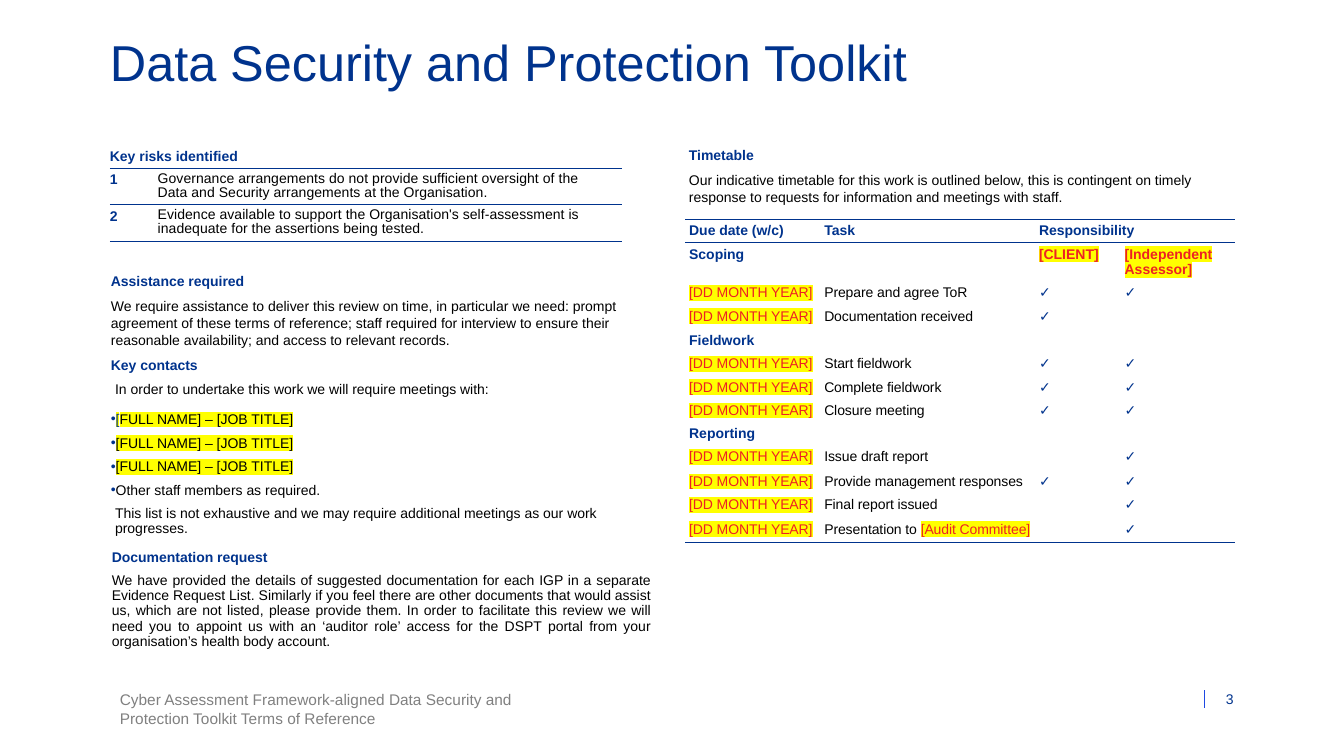
from lxml.etree import SubElement
from pptx import Presentation
from pptx.dml.color import RGBColor
from pptx.enum.shapes import MSO_CONNECTOR
from pptx.enum.text import MSO_ANCHOR, MSO_AUTO_SIZE, PP_ALIGN
from pptx.oxml.ns import qn
from pptx.util import Pt

NAVY, BLUE, RED, BLACK, GREY, YELLOW = (
    "00338D", "1E49E2", "ED2124", "000000", "808080", "FFFF00")
NO_STYLE = "{2D5ABB26-0587-4C30-8999-92F81FD0307C}"
INSET = 2.7

# style: size, colour, bold, highlight, letter spacing in hundredths of a point
STYLES = {
    "title": (36, NAVY, False, None, 0),
    "head": (10, NAVY, True, None, 0),
    "body": (10, BLACK, False, None, 0),
    "risk": (10, BLACK, False, None, 5),
    "bracket": (10, NAVY, False, YELLOW, 0),
    "contact": (10, BLACK, False, YELLOW, 0),
    "party": (10, RED, True, YELLOW, 0),
    "date": (10, RED, False, YELLOW, -5),
    "task": (10, BLACK, False, None, -5),
    "tick": (10, NAVY, False, None, -5),
    "footer": (11, GREY, False, None, 0),
    "page": (10, NAVY, False, None, 0),
}

TITLE = "Data Security and Protection Toolkit"
FOOTER = ("Cyber Assessment Framework-aligned Data Security and "
          "Protection Toolkit Terms of Reference")
PAGE = "3"

PLAIN = {"after": 6}
NOTE = {"left": 3, "lines": 0.9}
BULLET = {"left": 3, "lines": 0.9, "after": 6, "bullet": True}
JUSTIFIED = {"left": 3, "lines": 0.9, "after": 6, "align": PP_ALIGN.JUSTIFY}

# paragraph: runs as (text, style), then its format
ASSISTANCE = [
    ([("Assistance required", "head")], PLAIN),
    ([("We require assistance to deliver this review on time, in particular we need: "
       "prompt agreement of these terms of reference; staff required for interview to "
       "ensure their reasonable availability; and access to relevant records.", "body")], PLAIN),
    ([("Key contacts", "head")], PLAIN),
    ([("In order to undertake this work we will require meetings with:", "body")],
     {**NOTE, "after": 10.8}),
    ([("[", "bracket"), ("FULL NAME] – [JOB TITLE]", "contact")], BULLET),
    ([("[FULL NAME] – [JOB TITLE]", "contact")], BULLET),
    ([("[FULL NAME] – [JOB TITLE]", "contact")], BULLET),
    ([("Other staff members as required.", "body")], BULLET),
    ([("This list is not exhaustive and we may require additional meetings as our work "
       "progresses.", "body")], NOTE),
]
TIMETABLE_INTRO = [
    ([("Timetable", "head")], PLAIN),
    ([("Our indicative timetable for this work is outlined below, this is contingent on "
       "timely response to requests for information and meetings with staff.", "body")], PLAIN),
]
DOCUMENTATION = [
    ([("Documentation request", "head")], JUSTIFIED),
    ([("We have provided the details of suggested documentation for each IGP in a separate "
       "Evidence Request List. Similarly if you feel there are other documents that would "
       "assist us, which are not listed, please provide them. In order to facilitate this "
       "review we will need you to appoint us with an ‘auditor role’ access for the DSPT "
       "portal from your organisation’s health body account.", "body")], JUSTIFIED),
]

RISKS_HEAD = "Key risks identified"
RISKS = [
    "Governance arrangements do not provide sufficient oversight of the Data and Security "
    "arrangements at the Organisation.",
    "Evidence available to support the Organisation's self-assessment is inadequate for the "
    "assertions being tested.",
]

DATE = "[DD MONTH YEAR]"
COLUMNS = ["Due date (w/c)", "Task", "Responsibility"]
# phase: name, parties, tasks as (text, marked text, client tick, assessor tick)
PHASES = [
    ("Scoping", ["[CLIENT]", "[Independent Assessor]"],
     [("Prepare and agree ToR", "", "✓", "✓"),
      ("Documentation received", "", "✓", "")]),
    ("Fieldwork", [],
     [("Start fieldwork", "", "✓", "✓"),
      ("Complete fieldwork", "", "✓", "✓"),
      ("Closure meeting", "", "✓", "✓")]),
    ("Reporting", [],
     [("Issue draft report", "", "", "✓"),
      ("Provide management responses", "", "✓", "✓"),
      ("Final report issued", "", "", "✓"),
      ("Presentation to ", "[Audit Committee]", "", "✓")]),
]


def rgb(color):
    return RGBColor.from_string(color)


def write(p, runs, left=0, lines=1.0, before=0, after=0, bullet=False, align=PP_ALIGN.LEFT):
    """Fill a paragraph with styled runs and format it."""
    p.alignment, p.line_spacing = align, lines
    p.space_before, p.space_after = Pt(before), Pt(after)
    pPr = p._p.get_or_add_pPr()
    pPr.set("marL", str(Pt(left)))
    pPr.set("indent", str(Pt(-left if bullet else 0)))
    if bullet:
        SubElement(SubElement(pPr, qn("a:buClr")), qn("a:srgbClr")).set("val", NAVY)
        SubElement(pPr, qn("a:buChar")).set("char", "•")
    else:
        SubElement(pPr, qn("a:buNone"))
    for text, style in runs:
        size, color, bold, highlight, spacing = STYLES[style]
        r = p.add_run()
        r.text = text
        r.font.name, r.font.size, r.font.bold = "Arial", Pt(size), bold
        r.font.color.rgb = rgb(color)
        rPr = r._r.get_or_add_rPr()
        rPr.set("spc", str(spacing))
        if highlight:
            mark = SubElement(rPr, qn("a:highlight"))
            SubElement(mark, qn("a:srgbClr")).set("val", highlight)
            rPr.find(qn("a:solidFill")).addnext(mark)
    if not runs:
        p._p.get_or_add_endParaRPr().set("sz", "1000")


def fill_frame(sp, box, paragraphs, margins=(0, 0), anchor=MSO_ANCHOR.TOP):
    """Place a text shape and write its paragraphs; margins are (sides, top and bottom)."""
    sp.left, sp.top, sp.width, sp.height = map(Pt, box)
    tf = sp.text_frame
    tf.word_wrap, tf.auto_size, tf.vertical_anchor = True, MSO_AUTO_SIZE.NONE, anchor
    tf.margin_left = tf.margin_right = Pt(margins[0])
    tf.margin_top = tf.margin_bottom = Pt(margins[1])
    for i, (runs, fmt) in enumerate(paragraphs):
        write(tf.paragraphs[0] if i == 0 else tf.add_paragraph(), runs, **fmt)


def fill_cell(cell, runs, fmt, edges="", left=INSET, right=INSET, anchor=MSO_ANCHOR.TOP):
    """Write a cell; edges holds T and B for the ruled sides."""
    cell.margin_left, cell.margin_right = Pt(left), Pt(right)
    cell.margin_top = cell.margin_bottom = Pt(INSET)
    cell.vertical_anchor = anchor
    write(cell.text_frame.paragraphs[0], runs, **fmt)
    for edge in edges:
        ln = SubElement(cell._tc.get_or_add_tcPr(), qn("a:ln" + edge))
        ln.set("w", str(Pt(1)))
        SubElement(SubElement(ln, qn("a:solidFill")), qn("a:srgbClr")).set("val", NAVY)
    cell.fill.background()


def add_plain_table(s, x, y, widths, heights):
    box = map(Pt, (x, y, sum(widths), sum(heights)))
    table = s.shapes.add_table(len(heights), len(widths), *box).table
    table.first_row = table.horz_banding = False
    table._tbl.tblPr.find(qn("a:tableStyleId")).text = NO_STYLE
    for col, w in zip(table.columns, widths):
        col.width = Pt(w)
    for row, h in zip(table.rows, heights):
        row.height = Pt(h)
    return table


def add_timetable(s):
    rows = [[[(name, "head")] for name in COLUMNS] + [[]]]
    merges = [(0, 2)]
    for phase, parties, tasks in PHASES:
        if not parties:
            merges.append((len(rows), 0))
        party_cells = [[(name, "party")] for name in parties] or [[], []]
        rows.append([[(phase, "head")], [], *party_cells])
        for task, marked, *ticks in tasks:
            runs = [(task, "task")] + ([(marked, "date")] if marked else [])
            rows.append([[(DATE, "date")], runs, *([(t, "tick")] if t else [] for t in ticks)])
    table = add_plain_table(s, 489.6, 156.8, [96.5, 153.4, 61.2, 81.6], [15.8] * len(rows))
    for i, row in enumerate(rows):
        edges = "TB" if i == 0 else "B" if i == len(rows) - 1 else ""
        anchor = MSO_ANCHOR.BOTTOM if i == 0 else MSO_ANCHOR.TOP
        for j, runs in enumerate(row):
            fill_cell(table.cell(i, j), runs, {"before": 3, "after": 3}, edges, anchor=anchor)
    for i, j in merges:
        table.cell(i, j).merge(table.cell(i, 3))


def add_risks(s):
    table = add_plain_table(s, 78.5, 104.4, [31.2, 334.8], [15.8] + [26.1] * len(RISKS))
    for j, runs in enumerate([[(RISKS_HEAD, "head")], []]):
        fill_cell(table.cell(0, j), runs, {"lines": 0.9, "after": 6}, "B", 0,
                  anchor=MSO_ANCHOR.BOTTOM)
    table.cell(0, 0).merge(table.cell(0, 1))
    for i, risk in enumerate(RISKS, 1):
        number_edges = ("T" if i == 1 else "") + ("B" if i == len(RISKS) else "")
        fill_cell(table.cell(i, 0), [(str(i), "head")], {}, number_edges, 0)
        fill_cell(table.cell(i, 1), [(risk, "risk")], {**NOTE, "after": 6}, "TB", 0, 14)


prs = Presentation()
prs.slide_width, prs.slide_height = Pt(960), Pt(540)
s = prs.slides.add_slide(prs.slide_layouts[3])
title, left_body, right_body = s.placeholders

fill_frame(title, (78.5, 33.8, 698.4, 41.8), [([(TITLE, "title")], {"lines": 0.7})])
fill_frame(left_body, (79.2, 194.8, 390.6, 190), ASSISTANCE)
fill_frame(right_body, (492.1, 104.4, 390.6, 48), TIMETABLE_INTRO)
add_timetable(s)
add_risks(s)

for box, paragraphs, margins, anchor in [
    ((74.2, 390.2, 393.1, 67), DOCUMENTATION, (INSET, INSET), MSO_ANCHOR.TOP),
    ((78.5, 489.6, 327.6, 41.8), [([(FOOTER, "footer")], {})], (7.2, 3.6), MSO_ANCHOR.TOP),
    ((861.8, 493.4, 19.4, 11.5), [([(PAGE, "page")], {"align": PP_ALIGN.RIGHT})], (0, 0),
     MSO_ANCHOR.BOTTOM),
]:
    fill_frame(s.shapes.add_textbox(0, 0, 0, 0), box, paragraphs, margins, anchor)

divider = s.shapes.add_connector(MSO_CONNECTOR.STRAIGHT, *map(Pt, (860.4, 493.2, 860.4, 505.4)))
divider.line.color.rgb, divider.line.width = rgb(BLUE), Pt(0.5)
SubElement(divider._element.spPr, qn("a:effectLst"))

prs.save("out.pptx")
